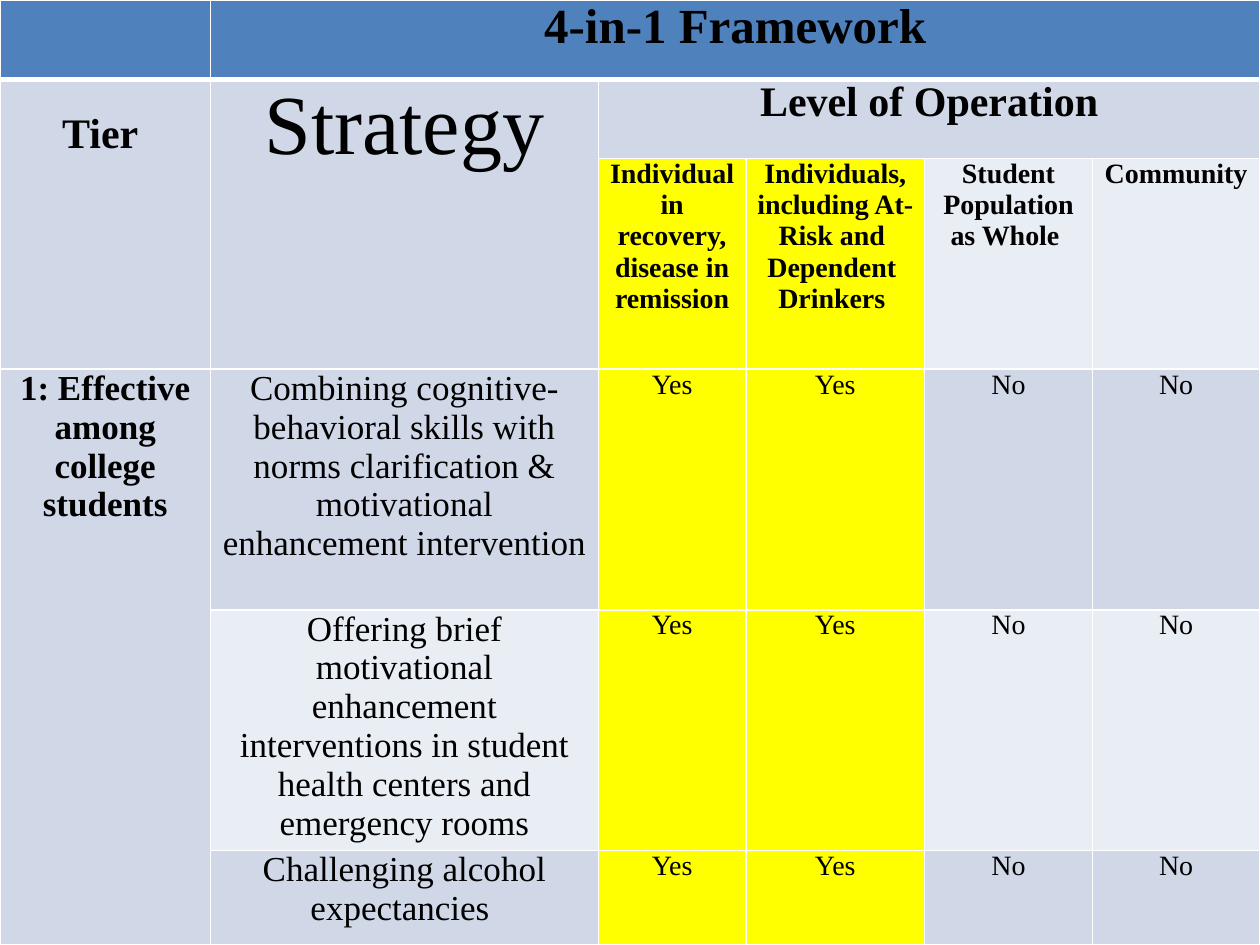
from copy import deepcopy

from lxml import etree
from pptx import Presentation
from pptx.dml.color import RGBColor
from pptx.enum.text import PP_ALIGN
from pptx.oxml.ns import qn
from pptx.util import Inches, Pt

CENTER = PP_ALIGN.CENTER
FONT_NAME = "Times New Roman"
COLORS = {
    "header": "4F81BD",
    "band": "D0D8E8",
    "light": "E9EDF4",
    "highlight": "FFFF00",
    "border": "FFFFFF",
    "text": "000000",
}
BACKGROUND_STOPS = [(0, "8EB4E3"), (0.5, "C2D1ED"), (1, "E1E8F5")]
COLUMN_WIDTHS = [1.67, 3.08, 1.17, 1.42, 1.33, 1.33]
ROW_HEIGHTS = [0.63, 0.63, 1.67, 1.91, 1.91, 0.75]
MERGES = [(0, 1, 0, 5), (1, 0, 2, 0), (1, 1, 2, 1), (1, 2, 1, 5), (3, 0, 5, 0)]
HEADINGS = [
    (0, 1, "4-in-1 Framework", 28, True),
    (1, 0, "Tier ", 24, True),
    (1, 1, "Strategy", 48, False),
    (1, 2, "Level of Operation", 24, True),
    (3, 0, "1: Effective among college students", 20, True),
]
LEVELS = [
    "Individual in recovery, disease in remission",
    "Individuals, including At-Risk and \nDependent \nDrinkers ",
    "Student Population as Whole ",
    "Community",
]
STRATEGIES = [
    "Combining cognitive-behavioral skills with norms clarification & "
    "motivational enhancement intervention",
    "Offering brief motivational enhancement interventions in student "
    "health centers and emergency rooms",
    "Challenging alcohol expectancies ",
]
ANSWERS = ["Yes", "Yes", "No", "No"]


def paint_background(slide):
    """Fill the slide with a three-stop gradient from top to bottom."""
    fill = slide.background.fill
    fill.gradient()
    fill.gradient_angle = 270
    stop_list = slide.element.find(".//" + qn("a:gsLst"))
    stop_list.append(deepcopy(stop_list[-1]))
    for stop, (position, color) in zip(fill.gradient_stops, BACKGROUND_STOPS):
        stop.position = position
        stop.color.rgb = RGBColor.from_string(color)


def write_cell(cell, text, size, bold):
    """Write centred text in a cell."""
    paragraph = cell.text_frame.paragraphs[0]
    paragraph.text = text
    paragraph.alignment = CENTER
    font_format = {"name": FONT_NAME, "size": Pt(size), "bold": bold}
    for run in paragraph.runs:
        for attribute, value in font_format.items():
            setattr(run.font, attribute, value)
        run.font.color.rgb = RGBColor.from_string(COLORS["text"])


def draw_borders(cell, top, bottom):
    """Draw solid borders, with the given top and bottom widths in points."""
    properties = cell._tc.get_or_add_tcPr()
    widths = {"a:lnL": 1, "a:lnR": 1, "a:lnT": top, "a:lnB": bottom}
    for index, (tag, width) in enumerate(widths.items()):
        line = etree.Element(qn(tag), w=str(Pt(width)))
        fill = etree.SubElement(line, qn("a:solidFill"))
        etree.SubElement(fill, qn("a:srgbClr"), val=COLORS["border"])
        properties.insert(index, line)


def cell_color(row, column):
    """Return the colour name of a cell from its place in the grid."""
    if row == 0:
        return "header"
    if row > 1 and column in (2, 3):
        return "highlight"
    return "light" if row % 2 == 0 and column > 0 else "band"


def format_cell(cell, row, column):
    """Set the margins, fill and borders of a cell."""
    margins = {
        "margin_left": Inches(0.07),
        "margin_right": Inches(0.07),
        "margin_top": 0,
        "margin_bottom": 0,
    }
    for attribute, value in margins.items():
        setattr(cell, attribute, value)
    cell.fill.solid()
    cell.fill.fore_color.rgb = RGBColor.from_string(COLORS[cell_color(row, column)])
    draw_borders(cell, 3 if row == 1 else 1, 3 if row == 0 else 1)


def add_framework_table(slide, left, top, width, height):
    """Add the framework table in the given box."""
    table = slide.shapes.add_table(
        len(ROW_HEIGHTS), len(COLUMN_WIDTHS), left, top, width, height
    ).table
    for column, share in zip(table.columns, COLUMN_WIDTHS):
        column.width = int(width * share / sum(COLUMN_WIDTHS))
    for row, share in zip(table.rows, ROW_HEIGHTS):
        row.height = int(height * share / sum(ROW_HEIGHTS))
    for row in range(len(ROW_HEIGHTS)):
        for column in range(len(COLUMN_WIDTHS)):
            format_cell(table.cell(row, column), row, column)
    for first_row, first_column, last_row, last_column in MERGES:
        table.cell(first_row, first_column).merge(table.cell(last_row, last_column))

    for row, column, text, size, bold in HEADINGS:
        write_cell(table.cell(row, column), text, size, bold)
    table.cell(1, 0).margin_top = Inches(0.25)
    for column, level in enumerate(LEVELS, start=2):
        write_cell(table.cell(2, column), level, 16, True)
    for row, strategy in enumerate(STRATEGIES, start=3):
        write_cell(table.cell(row, 1), strategy, 20, False)
        for column, answer in enumerate(ANSWERS, start=2):
            write_cell(table.cell(row, column), answer, 16, False)


def main():
    """Build and save the presentation."""
    presentation = Presentation()
    presentation.slide_width = Inches(10)
    presentation.slide_height = Inches(7.5)
    slide = presentation.slides.add_slide(presentation.slide_layouts[6])
    paint_background(slide)
    add_framework_table(slide, 0, 0, Inches(10), Inches(7.5))
    presentation.save("out.pptx")


if __name__ == "__main__":
    main()
